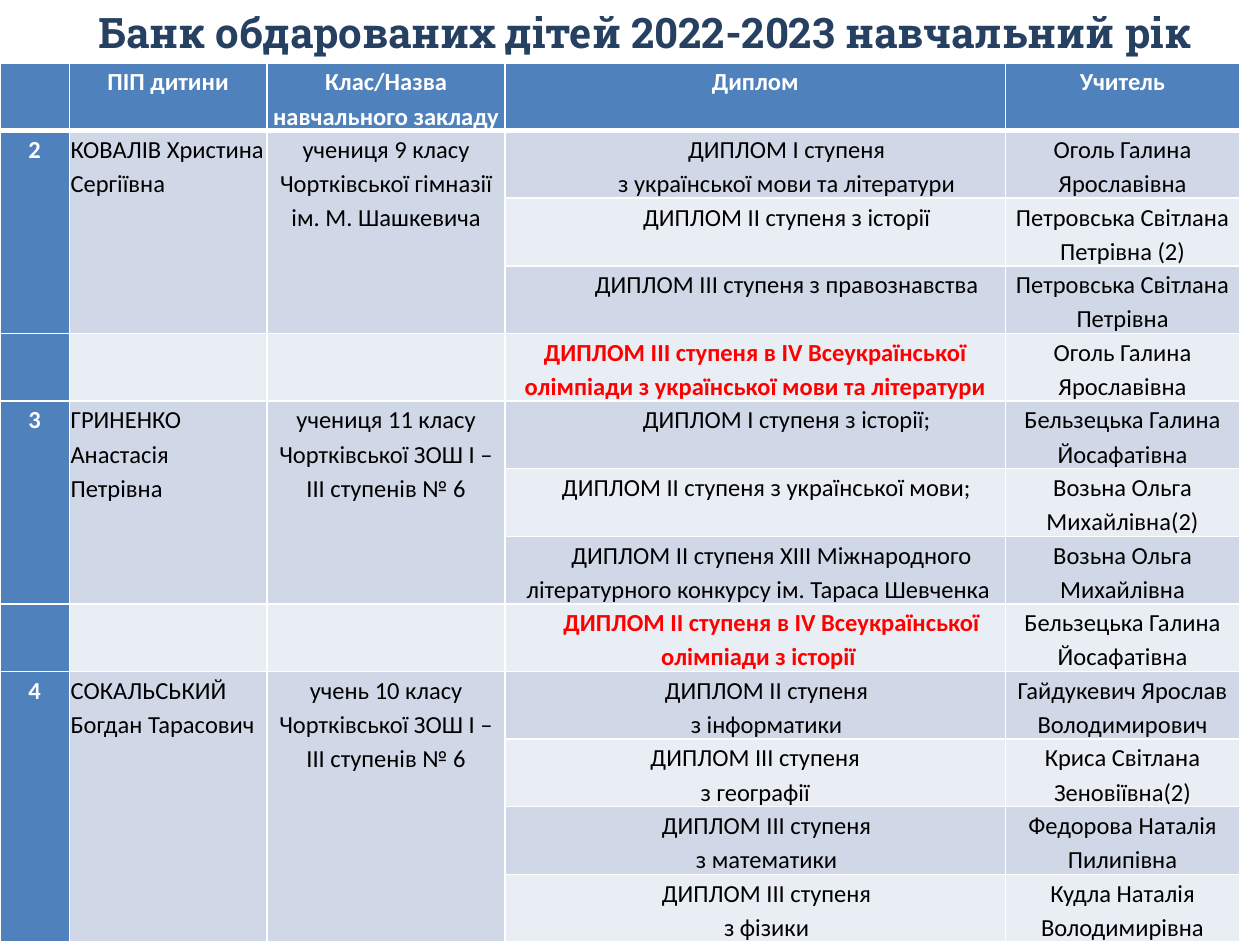
from pptx import Presentation
from pptx.dml.color import RGBColor
from pptx.enum.text import MSO_ANCHOR, MSO_AUTO_SIZE, PP_ALIGN
from pptx.oxml.ns import qn
from pptx.util import Inches, Pt
from lxml import etree

LEFT, CENTER = PP_ALIGN.LEFT, PP_ALIGN.CENTER
TOP, GROW = MSO_ANCHOR.TOP, MSO_AUTO_SIZE.SHAPE_TO_FIT_TEXT
BLUE, NAVY, WHITE, BLACK, RED = "4F81BD", "254061", "FFFFFF", "000000", "FF0000"
BANDS = ["E9EDF4", "D0D8E8"]
WIDTHS = [0.55, 1.57, 1.89, 3.97, 1.86]
FLAT, DEEP, SLIM, HANG = (0, 0), (0.5, 0), (0.18, 0), (0.05, 0.21)

HEADS = ["", "ПІП дитини", "Клас/Назва навчального закладу", "Диплом", "Учитель"]
GROUPS = [
    ("2", "КОВАЛІВ Христина Сергіївна",
     "учениця 9 класу Чортківської гімназії ім. М. Шашкевича", [
         ("ДИПЛОМ І ступеня\nз української мови та літератури", DEEP,
          "Оголь Галина Ярославівна"),
         ("ДИПЛОМ ІІ ступеня з історії", DEEP, "Петровська Світлана Петрівна (2)"),
         ("ДИПЛОМ ІІІ ступеня з правознавства", DEEP, "Петровська Світлана Петрівна")]),
    ("", "", "", [
        ("ДИПЛОМ ІІІ ступеня в ІV Всеукраїнської олімпіади з української мови "
         "та літератури", FLAT, "Оголь Галина Ярославівна")]),
    ("3", "ГРИНЕНКО Анастасія Петрівна",
     "учениця 11 класу Чортківської ЗОШ І – ІІІ ступенів № 6", [
         ("ДИПЛОМ І ступеня з історії;", DEEP, "Бельзецька Галина Йосафатівна"),
         ("ДИПЛОМ ІІ ступеня з української мови;", SLIM, "Возьна Ольга Михайлівна(2)"),
         ("ДИПЛОМ ІІ ступеня ХІІІ Міжнародного літературного конкурсу "
          "ім. Тараса Шевченка", HANG, "Возьна Ольга Михайлівна")]),
    ("", "", "", [
        ("ДИПЛОМ ІІ ступеня в ІV Всеукраїнської олімпіади з історії", HANG,
         "Бельзецька Галина Йосафатівна")]),
    ("4", "СОКАЛЬСЬКИЙ Богдан Тарасович",
     "учень 10 класу Чортківської ЗОШ І – ІІІ ступенів № 6", [
         ("ДИПЛОМ ІІ ступеня\nз інформатики", SLIM, "Гайдукевич Ярослав Володимирович"),
         ("ДИПЛОМ ІІІ ступеня\nз географії", FLAT, "Криса Світлана Зеновіївна(2)"),
         ("ДИПЛОМ ІІІ ступеня\nз математики", SLIM, "Федорова Наталія Пилипівна"),
         ("ДИПЛОМ ІІІ ступеня\nз фізики", SLIM, "Кудла Наталія Володимирівна")]),
]


def color(code):
    """Turn a hex string into a colour."""
    return RGBColor.from_string(code)


def assign(item, values):
    """Set each named attribute of an item."""
    for name, value in values.items():
        setattr(item, name, value)


class Board:
    """Hold the text style and the current slide."""

    def __init__(self, slide):
        """Keep the slide and the base font."""
        self.slide = slide
        self.font = {"name": "Calibri", "size": Pt(14)}

    def label(self, para, text, tint, bold, **extra):
        """Put styled text in a paragraph."""
        run = para.add_run()
        run.text = text
        assign(run.font, {**self.font, "bold": bold, **extra})
        run.font.color.rgb = color(tint)

    def title(self, text):
        """Place and format the title."""
        box = self.slide.shapes.title
        assign(box, {"left": Inches(0.24), "top": Inches(0),
                     "width": Inches(9.76), "height": Inches(0.5)})
        frame = box.text_frame
        assign(frame, {"vertical_anchor": TOP, "word_wrap": True, "auto_size": GROW})
        para = frame.paragraphs[0]
        para.alignment = CENTER
        self.label(para, text, NAVY, True, name="Roboto Slab", size=Pt(24))

    def table(self, count):
        """Add a table with equal rows."""
        frame = self.slide.shapes.add_table(
            count, len(WIDTHS), Inches(0), Inches(0.5), Inches(9.84), Inches(6.98))
        grid = frame.table
        for column, width in zip(grid.columns, WIDTHS):
            column.width = Inches(width)
        return grid

    def border(self, cell, base):
        """Draw white lines around a cell."""
        props = cell._tc.get_or_add_tcPr()
        for spot, side in enumerate(["lnL", "lnR", "lnT", "lnB"]):
            line = etree.Element(qn("a:" + side), w=str(Pt(base if side == "lnB" else 1)))
            fill = etree.SubElement(line, qn("a:solidFill"))
            etree.SubElement(fill, qn("a:srgbClr"), val=WHITE)
            props.insert(spot, line)

    def cell(self, cell, text, fill, tint=BLACK, bold=False, align=CENTER,
             indent=FLAT, base=1):
        """Fill a cell and set its lines."""
        cell.fill.solid()
        cell.fill.fore_color.rgb = color(fill)
        self.border(cell, base)
        if not text:
            return
        assign(cell, {"margin_left": Inches(0.01), "margin_right": Inches(0.01),
                      "margin_top": 0, "margin_bottom": 0, "vertical_anchor": TOP})
        frame = cell.text_frame
        for spot, line in enumerate(text.split("\n")):
            para = frame.add_paragraph() if spot else frame.paragraphs[0]
            assign(para, {"alignment": align, "line_spacing": 1.15})
            props = para._p.get_or_add_pPr()
            for key, size in zip(["marL", "indent"], indent):
                props.set(key, str(Inches(size)))
            self.label(para, line, tint, bold)

    def group(self, grid, start, data):
        """Enter one pupil with all diplomas and return the next row."""
        number, pupil, school, awards = data
        final = start + len(awards) - 1
        for row, (award, indent, coach) in enumerate(awards, start):
            band = BANDS[row % 2]
            lead = row == start
            tint, bold = (BLACK, False) if number else (RED, True)
            self.cell(grid.cell(row, 0), number if lead else "", BLUE, WHITE, True)
            self.cell(grid.cell(row, 1), pupil if lead else "", band, align=LEFT)
            self.cell(grid.cell(row, 2), school if lead else "", band)
            self.cell(grid.cell(row, 3), award, band, tint, bold, indent=indent)
            self.cell(grid.cell(row, 4), coach, band)
        if final > start:
            for col in range(3):
                grid.cell(start, col).merge(grid.cell(final, col))
        return final + 1


def main():
    """Build the slide and save it."""
    deck = Presentation()
    assign(deck, {"slide_width": Inches(10), "slide_height": Inches(7.5)})
    board = Board(deck.slides.add_slide(deck.slide_layouts[5]))
    board.title("Банк обдарованих дітей 2022-2023 навчальний рік")
    grid = board.table(1 + sum(len(data[3]) for data in GROUPS))
    for col, head in enumerate(HEADS):
        board.cell(grid.cell(0, col), head, BLUE, WHITE, True, base=3)
    row = 1
    for data in GROUPS:
        row = board.group(grid, row, data)
    deck.save("out.pptx")


if __name__ == "__main__":
    main()
